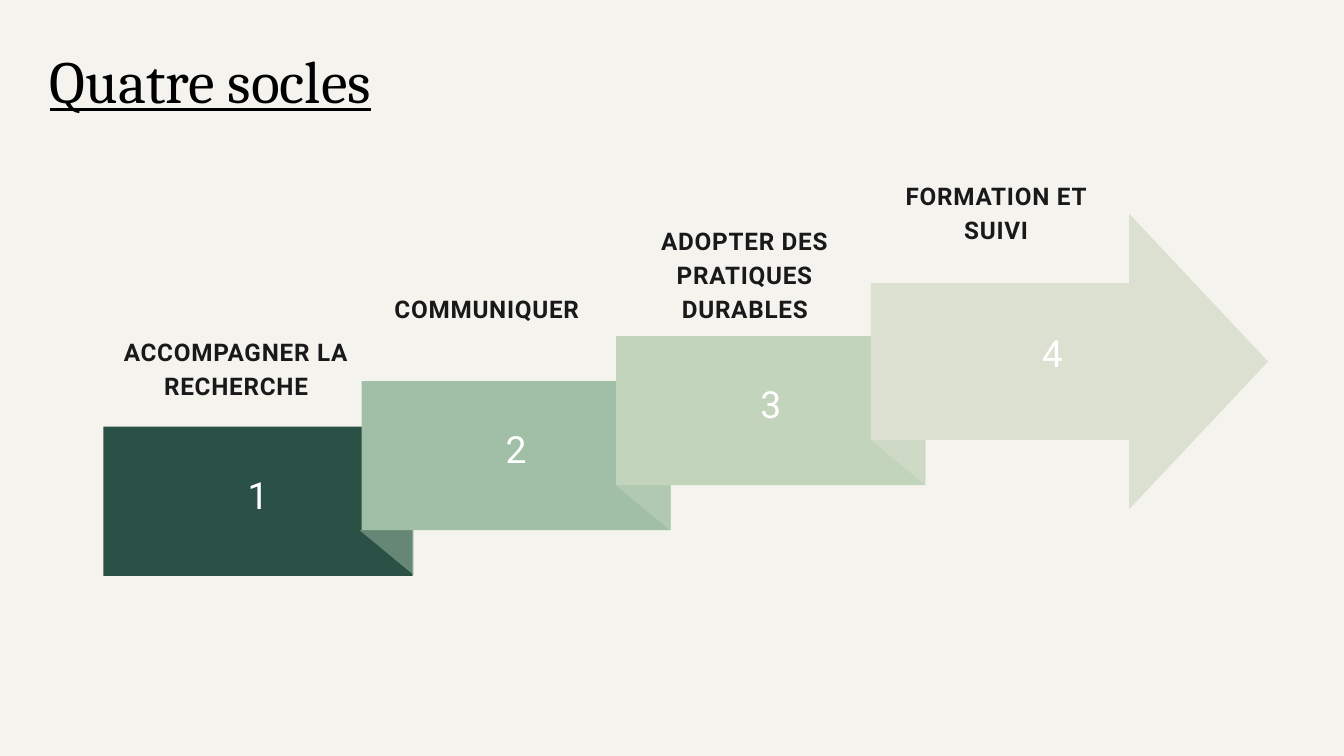
from dataclasses import dataclass

from lxml.etree import SubElement
from pptx import Presentation
from pptx.dml.color import RGBColor
from pptx.enum.shapes import MSO_SHAPE
from pptx.enum.text import MSO_ANCHOR, MSO_AUTO_SIZE, PP_ALIGN
from pptx.oxml.ns import qn
from pptx.util import Pt

EMU_PER_PX = 9144


@dataclass(frozen=True)
class Theme:
    background: str = "F4F3EE"
    steps: tuple = ("2B5046", "A1BFA7", "C2D4BB", "DCE0D1")
    title: tuple = ("Cambria", 64, 89.6, "000000", 0)
    number: tuple = ("Roboto", 40, 56, "FFFFFF", 4.4)
    label: tuple = ("Roboto", 26, 36.4, "191919", 0.8)


THEME = Theme()
BAND_WIDTH, BAND_HEIGHT = 460, 222
NUMBER_HEIGHT, NUMBER_RISE = 254, 32
FOLD_WIDTH, FOLD_HEIGHT = 81, 67
LABEL_WIDTH, LABEL_LINE = 373, 50
BANDS = ((154, 635), (538, 567), (917, 500))
FOLDS = ((916, 722), (535, 789), (1295, 654))
FOLD_STEPS = (2, 1, 3)
LABELS = (
    ("ACCOMPAGNER LA RECHERCHE", 165, 494, 2),
    ("COMMUNIQUER", 538, 430, 1),
    ("ADOPTER DES PRATIQUES DURABLES", 922, 330, 3),
    ("FORMATION ET SUIVI", 1296, 262, 2),
)


def px(*lengths):
    return [length * EMU_PER_PX for length in lengths]


def set_values(target, values):
    for name, value in values.items():
        setattr(target, name, value)


def paint(shape, color):
    shape.shadow.inherit = False
    shape.fill.solid()
    shape.fill.fore_color.rgb = RGBColor.from_string(color)
    shape.line.fill.background()


def add_block(page, kind, place, color):
    shape = page.shapes.add_shape(kind, *px(*place))
    paint(shape, color)
    return shape


def add_fold(page, left, top, color):
    right, bottom = left + FOLD_WIDTH, top + FOLD_HEIGHT
    builder = page.shapes.build_freeform(left, top, scale=EMU_PER_PX)
    builder.add_line_segments([(right, top), (right, bottom)], close=True)
    fold = builder.convert_to_shape()
    paint(fold, color)
    tint = fold.fill._xPr.find(qn("a:solidFill"))[0]
    SubElement(tint, qn("a:alpha")).set("val", "50000")


def add_text(page, text, place, style, frame_format, align, **font_format):
    family, size, leading, color, tracking = style
    box = page.shapes.add_textbox(*px(*place))
    set_values(box.text_frame, {"word_wrap": True, **frame_format})
    para = box.text_frame.paragraphs[0]
    set_values(para, {"alignment": align, "line_spacing": Pt(leading)})
    span = para.add_run()
    span.text = text
    set_values(span.font, {"name": family, "size": Pt(size), **font_format})
    span.font.color.rgb = RGBColor.from_string(color)
    if tracking:
        span._r.get_or_add_rPr().set("spc", str(round(tracking * 100)))


def frame_values(margin, **values):
    sides = ("left", "top", "right", "bottom")
    return {f"margin_{side}": margin * EMU_PER_PX for side in sides} | values


def add_number(page, number, left, top, width):
    add_text(page, str(number), (left, top, width, NUMBER_HEIGHT), THEME.number,
             frame_values(6, vertical_anchor=MSO_ANCHOR.MIDDLE), PP_ALIGN.CENTER)


def add_arrow(page):
    arrow = add_block(page, MSO_SHAPE.RIGHT_ARROW, (1296, 318, 591, 440), THEME.steps[3])
    arrow.adjustments[0] = 0.53
    arrow.adjustments[1] = 0.47
    add_number(page, 4, 1296, 392, 540)


def main():
    deck = Presentation()
    deck.slide_width, deck.slide_height = px(2000, 1125)
    page = deck.slides.add_slide(deck.slide_layouts[6])
    page.background.fill.solid()
    page.background.fill.fore_color.rgb = RGBColor.from_string(THEME.background)

    for number, (left, top) in enumerate(BANDS, 1):
        add_block(page, MSO_SHAPE.RECTANGLE, (left, top, BAND_WIDTH, BAND_HEIGHT),
                  THEME.steps[number - 1])
        add_number(page, number, left, top - NUMBER_RISE, BAND_WIDTH)

    add_arrow(page)
    for (left, top), step in zip(FOLDS, FOLD_STEPS):
        add_fold(page, left, top, THEME.steps[step])

    growing = frame_values(0, auto_size=MSO_AUTO_SIZE.SHAPE_TO_FIT_TEXT)
    add_text(page, "Quatre socles", (74, 47, 1626, 119), THEME.title, growing,
             PP_ALIGN.LEFT, underline=True)
    for text, left, top, lines in LABELS:
        add_text(page, text, (left, top, LABEL_WIDTH, lines * LABEL_LINE), THEME.label,
                 growing, PP_ALIGN.CENTER, bold=True)

    deck.save("out.pptx")


if __name__ == "__main__":
    main()
